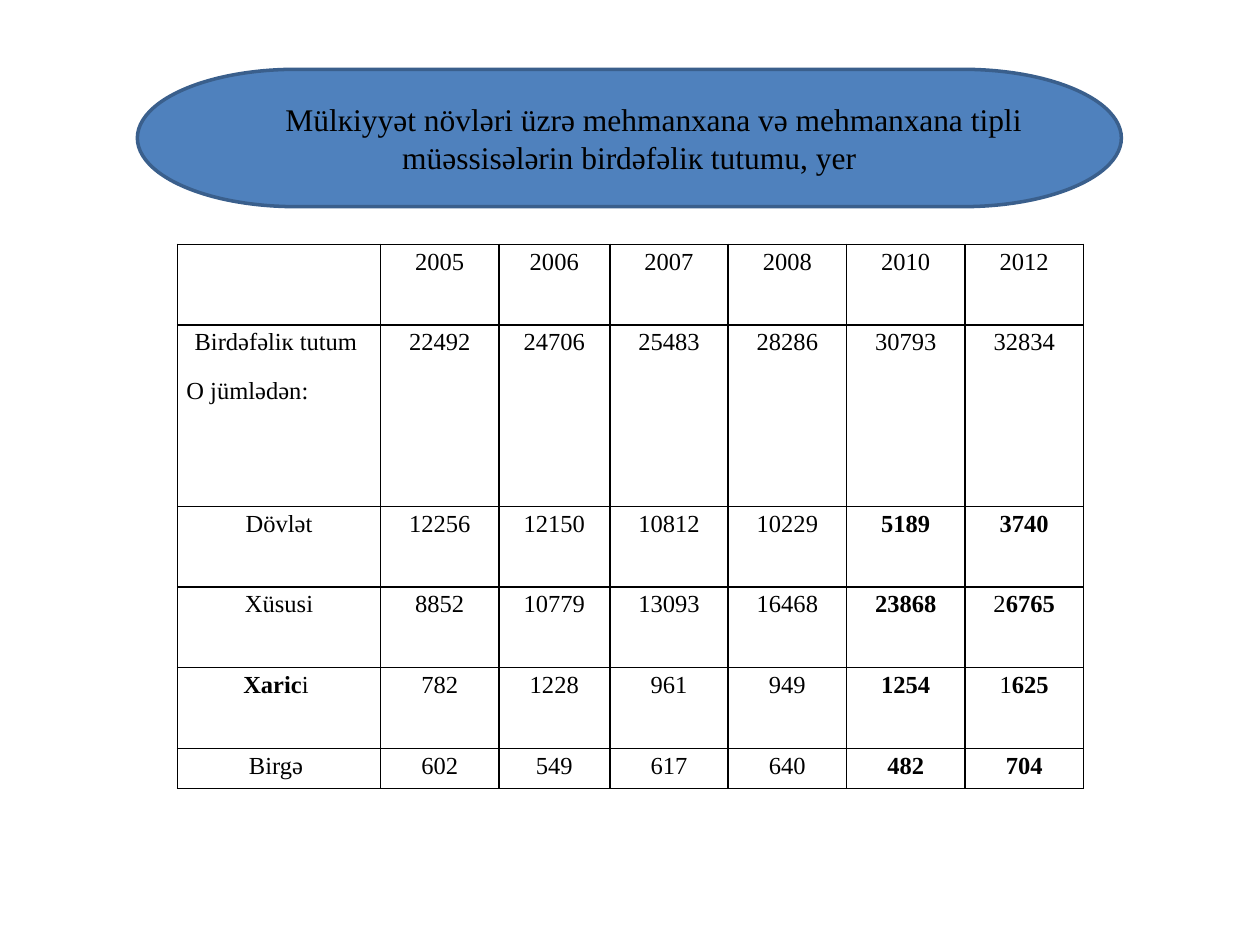
from lxml import etree
from pptx import Presentation
from pptx.dml.color import RGBColor
from pptx.enum.shapes import MSO_SHAPE
from pptx.enum.text import MSO_ANCHOR, PP_ALIGN
from pptx.oxml.ns import qn
from pptx.util import Inches, Pt

TITLE = ("Mülкiyyət növləri üzrə mеhmаnхаnа və mеhmаnхаnа tipli "
         "müəssisələrin birdəfəliк tutumu, yеr")

# Text between asterisks is bold; a line break starts a new paragraph.
ROWS = [
    ["", "2005", "2006", "2007", "2008", "2010", "2012"],
    ["Birdəfəliк tutum \nО jümlədən:",
     "22492", "24706", "25483", "28286", "30793", "32834"],
    ["Dövlət", "12256", "12150", "10812", "10229", "*5189*", "*3740*"],
    ["Хüsusi", "8852", "10779", "13093", "16468", "*23868*", "2*6765*"],
    ["*Хаric*i ", "782", "1228", "961", "949", "*1254*", "1*625*"],
    ["Birgə ", "602", "549", "617", "640", "*482*", "*704*"],
]
WIDTHS = [1.61, 0.94, 0.88] + [0.94] * 4
HEIGHTS = [0.64, 1.44] + [0.64] * 3 + [0.32]

FONT = "Times New Roman"
BLACK = RGBColor(0, 0, 0)
BLUE = RGBColor(0x4F, 0x81, 0xBD)
NAVY = RGBColor(0x3A, 0x5F, 0x8C)
CENTER, LEFT = PP_ALIGN.CENTER, PP_ALIGN.LEFT
MIDDLE = MSO_ANCHOR.MIDDLE
PILL = MSO_SHAPE.FLOWCHART_TERMINATOR


def style(para, size, align):
    para.alignment = align
    para.font.name = FONT
    para.font.size = Pt(size)
    para.font.color.rgb = BLACK


def add_border(cell):
    props = cell._tc.get_or_add_tcPr()
    for side in ("a:lnL", "a:lnR", "a:lnT", "a:lnB"):
        line = etree.SubElement(props, qn(side), w=str(Pt(1)))
        fill = etree.SubElement(line, qn("a:solidFill"))
        etree.SubElement(fill, qn("a:srgbClr"), val=str(BLACK))


def fill_cell(cell, text):
    cell.margin_left = cell.margin_right = Inches(0.07)
    cell.margin_top = cell.margin_bottom = 0
    add_border(cell)
    cell.fill.background()
    frame = cell.text_frame
    for i, line in enumerate(text.split("\n")):
        para = frame.add_paragraph() if i else frame.paragraphs[0]
        style(para, 14, LEFT if i else CENTER)
        para.line_spacing = 1.15
        para.space_after = Pt(10)
        for j, part in enumerate(line.split("*")):
            if part:
                run = para.add_run()
                run.text = part
                run.font.bold = j % 2 == 1


def add_grid(slide):
    table = slide.shapes.add_table(
        len(ROWS), len(WIDTHS), Inches(1.41), Inches(1.94),
        Inches(sum(WIDTHS)), Inches(sum(HEIGHTS))).table
    table.first_row = table.horz_banding = False
    for col, width in zip(table.columns, WIDTHS):
        col.width = Inches(width)
    for row, height, texts in zip(table.rows, HEIGHTS, ROWS):
        row.height = Inches(height)
        for cell, text in zip(row.cells, texts):
            fill_cell(cell, text)


def add_title(slide):
    pill = slide.shapes.add_shape(
        PILL, Inches(1.09), Inches(0.55), Inches(7.81), Inches(1.09))
    pill.shadow.inherit = False
    pill.fill.solid()
    pill.fill.fore_color.rgb = BLUE
    pill.line.color.rgb = NAVY
    pill.line.width = Pt(2)
    frame = pill.text_frame
    frame.word_wrap = True
    frame.vertical_anchor = MIDDLE
    para = frame.paragraphs[0]
    para.text = TITLE
    style(para, 18, CENTER)
    para._p.get_or_add_pPr().set("indent", str(Inches(0.39)))


def main():
    deck = Presentation()
    deck.slide_width, deck.slide_height = Inches(10), Inches(7.5)
    slide = deck.slides.add_slide(deck.slide_layouts[6])
    add_grid(slide)
    add_title(slide)
    deck.save("out.pptx")


if __name__ == "__main__":
    main()
